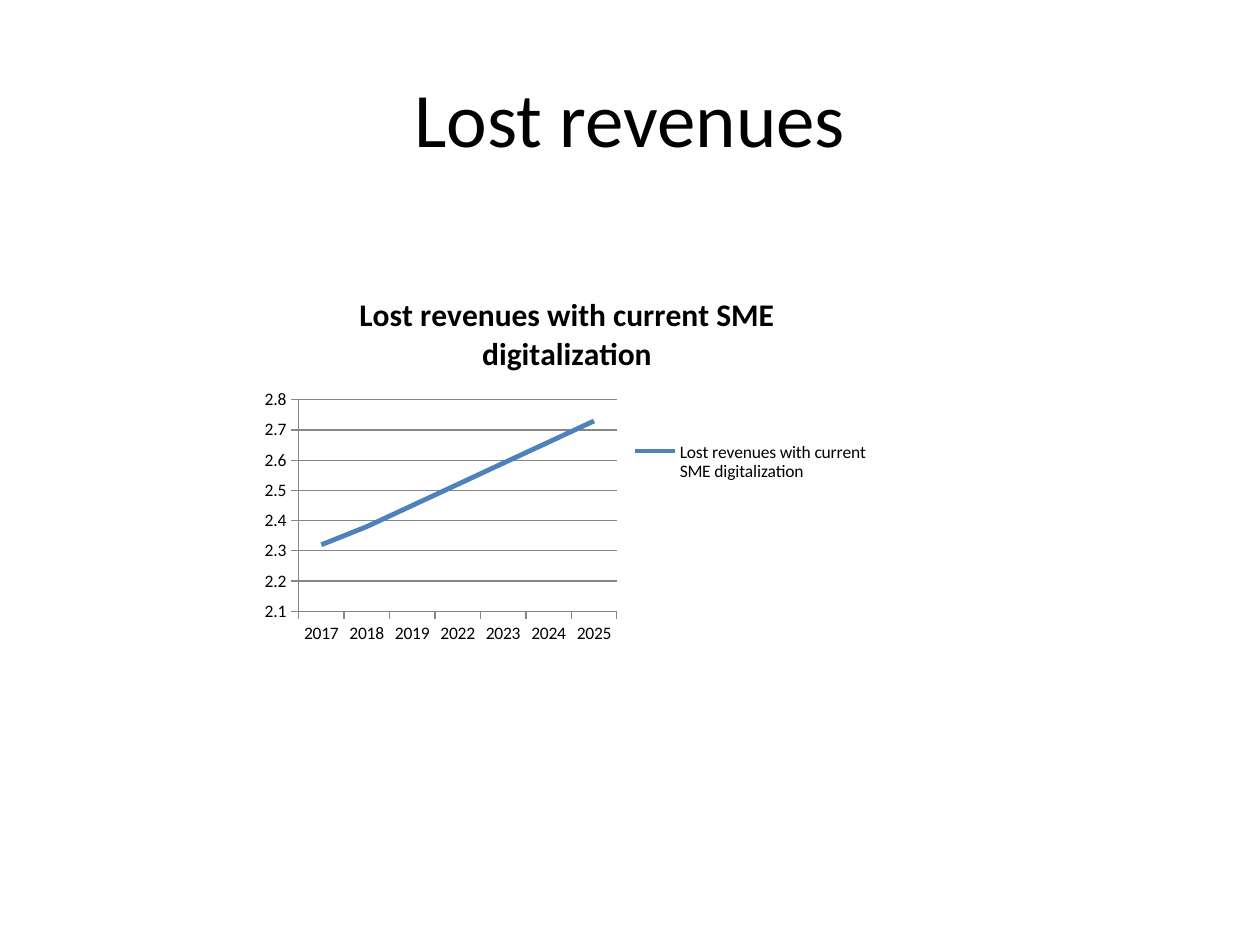
"""Build a slide with a line chart of lost revenues."""
import dataclasses

import pptx
import pptx.chart.data
import pptx.dml.color
import pptx.enum.chart
import pptx.enum.text
import pptx.util

Pt = pptx.util.Pt
Color = pptx.dml.color.RGBColor.from_string


@dataclasses.dataclass(frozen=True)
class Theme:
    """Colours and type sizes of the slide."""
    face: str = "Calibri"
    ink: str = "000000"
    grid: str = "868686"
    line: str = "4F81BD"
    title: float = 44
    head: float = 18
    label: float = 10
    thin: float = 0.75
    thick: float = 2.75


class Deck:
    """Draw styled elements on the current slide."""

    def __init__(self, theme, wide, high):
        """Open a deck of the given size with one blank slide."""
        self.theme = theme
        self.show = pptx.Presentation()
        self.show.slide_width, self.show.slide_height = Pt(wide), Pt(high)
        self.slide = self.show.slides.add_slide(self.show.slide_layouts[6])

    def font(self, font, size, bold=False):
        """Apply the theme's face and ink to a font."""
        font.name, font.size, font.bold = self.theme.face, Pt(size), bold
        font.color.rgb = Color(self.theme.ink)

    def line(self, item, color, width):
        """Style the line of a chart part."""
        item.format.line.color.rgb = Color(color)
        item.format.line.width = Pt(width)

    def title(self, text, box):
        """Add a centred slide title."""
        frame = self.slide.shapes.add_textbox(*map(Pt, box)).text_frame
        frame.word_wrap = True
        frame.vertical_anchor = pptx.enum.text.MSO_ANCHOR.MIDDLE
        para = frame.paragraphs[0]
        para.text = text
        para.alignment = pptx.enum.text.PP_ALIGN.CENTER
        self.font(para.font, self.theme.title)

    def chart(self, name, years, sums, box, low, high, step):
        """Add a line chart with one series, a title and a legend."""
        enum, theme = pptx.enum.chart, self.theme
        data = pptx.chart.data.CategoryChartData()
        data.categories = years
        data.add_series(name, sums)
        chart = self.slide.shapes.add_chart(
            enum.XL_CHART_TYPE.LINE, *map(Pt, box), data).chart
        self.font(chart.font, theme.label)

        chart.has_title = True
        chart.chart_title.include_in_layout = False
        para = chart.chart_title.text_frame.paragraphs[0]
        para.text = name
        self.font(para.font, theme.head, True)

        chart.has_legend = True
        chart.legend.position = enum.XL_LEGEND_POSITION.RIGHT
        chart.legend.include_in_layout = False

        for axis in (chart.category_axis, chart.value_axis):
            axis.major_tick_mark = enum.XL_TICK_MARK.OUTSIDE
            axis.minor_tick_mark = enum.XL_TICK_MARK.NONE
            self.line(axis, theme.grid, theme.thin)
        axis = chart.value_axis
        axis.minimum_scale, axis.maximum_scale = low, high
        axis.major_unit = step
        axis.tick_labels.number_format = "0.0"
        axis.tick_labels.number_format_is_linked = False
        axis.has_major_gridlines = True
        self.line(axis.major_gridlines, theme.grid, theme.thin)

        plot = chart.plots[0]
        plot.vary_by_categories = False
        series = plot.series[0]
        series.smooth = False
        series.marker.style = enum.XL_MARKER_STYLE.NONE
        self.line(series, theme.line, theme.thick)

    def save(self):
        """Write the deck."""
        self.show.save("out.pptx")


def main():
    """Build and save the slide."""
    deck = Deck(Theme(), 720, 540)
    deck.title("Lost revenues", (36, 21.6, 648, 90))
    deck.chart(
        "Lost revenues with current SME digitalization",
        ["2017", "2018", "2019", "2022", "2023", "2024", "2025"],
        [2.32, 2.38, 2.45, 2.52, 2.59, 2.66, 2.73],
        (144, 156, 360, 216), 2.1, 2.8, 0.1)
    deck.save()


if __name__ == "__main__":
    main()
